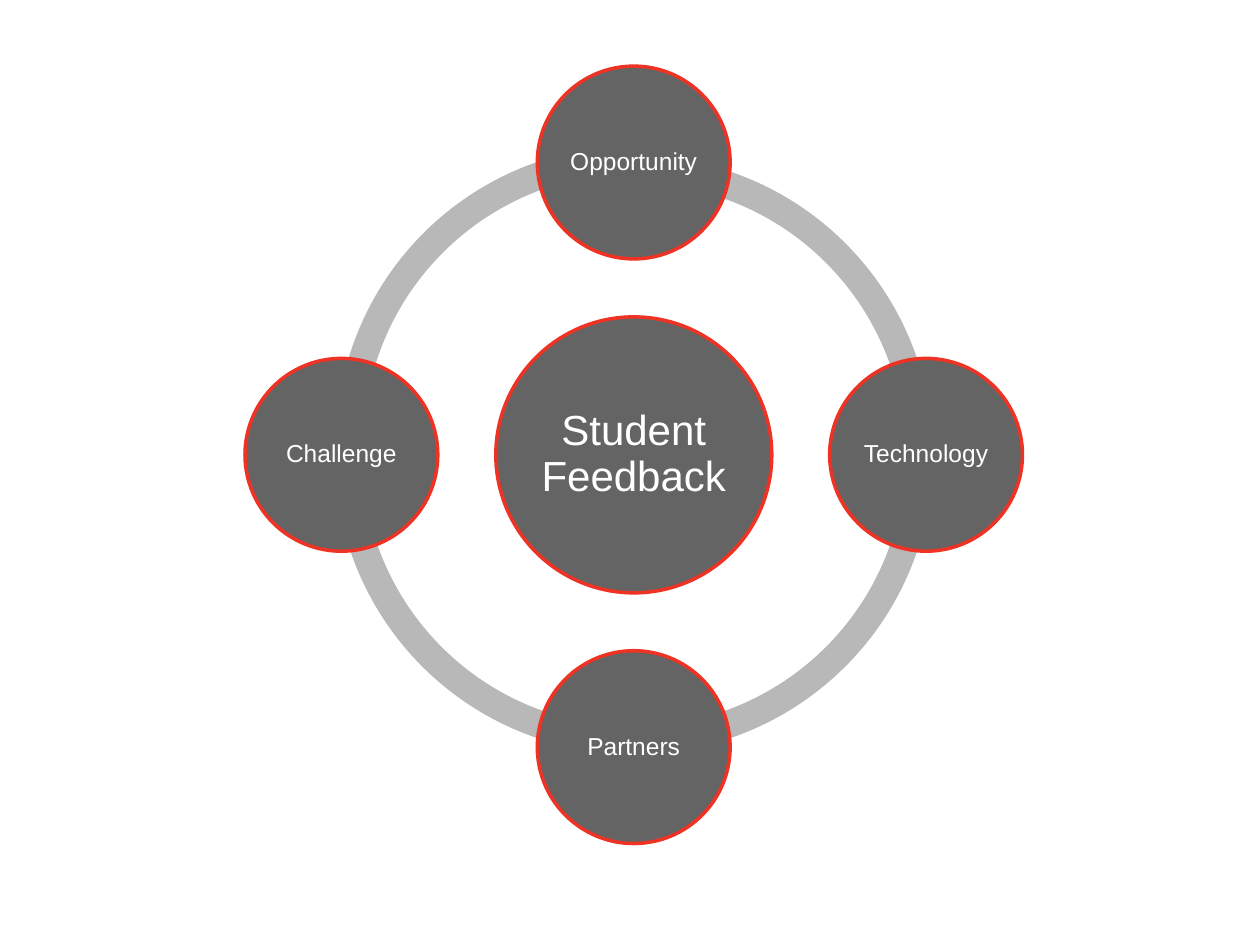
"""Build a radial cycle slide with a central topic and four linked themes."""
from dataclasses import dataclass

from pptx import Presentation
from pptx.dml.color import RGBColor
from pptx.enum.shapes import MSO_SHAPE
from pptx.enum.text import MSO_ANCHOR, PP_ALIGN
from pptx.shapes.autoshape import Shape
from pptx.slide import Slide
from pptx.util import Inches, Pt

CENTER_X, CENTER_Y = 5.03, 3.61
ORBIT = 2.32
RING_SIZE = 4.75
RING_THICKNESS = 0.046
ADJ_PER_DEGREE = 0.6


@dataclass
class Node:
    text: str
    dx: float = 0
    dy: float = 0
    size: float = 1.53
    font_size: int = 14
    inset: float = 0.02


@dataclass
class Arc:
    start: int
    end: int
    dx: float = 0
    dy: float = 0


NODES = [
    Node("Student Feedback", size=2.19, font_size=24, inset=0.03),
    Node("Opportunity", dy=-ORBIT),
    Node("Technology", dx=ORBIT),
    Node("Partners", dy=ORBIT),
    Node("Challenge", dx=-ORBIT),
]
ARCS = [
    Arc(180, 270, dx=0.01, dy=-0.08),
    Arc(90, 180),
    Arc(0, 90),
    Arc(270, 0),
]


def rgb(value: str) -> RGBColor:
    """Convert a hex string to a colour."""
    return RGBColor.from_string(value)


def add_centered(s: Slide, kind: MSO_SHAPE, dx: float, dy: float,
                 size: float, fill: str) -> Shape:
    """Add a filled square-framed shape offset from the diagram centre."""
    left, top = CENTER_X + dx - size / 2, CENTER_Y + dy - size / 2
    sp = s.shapes.add_shape(kind, Inches(left), Inches(top), Inches(size), Inches(size))
    sp.shadow.inherit = False
    sp.fill.solid()
    sp.fill.fore_color.rgb = rgb(fill)
    return sp


def add_arc(s: Slide, arc: Arc) -> None:
    """Draw one quarter of the ring."""
    sp = add_centered(s, MSO_SHAPE.BLOCK_ARC, arc.dx, arc.dy, RING_SIZE, "B8B8B8")
    sp.line.fill.background()
    sp.adjustments[0] = arc.start * ADJ_PER_DEGREE
    sp.adjustments[1] = arc.end * ADJ_PER_DEGREE
    sp.adjustments[2] = RING_THICKNESS


def add_node(s: Slide, node: Node) -> None:
    """Draw one labelled circle."""
    sp = add_centered(s, MSO_SHAPE.OVAL, node.dx, node.dy, node.size, "646464")
    sp.line.color.rgb = rgb("EE3224")
    sp.line.width = Pt(2)
    tf = sp.text_frame
    tf.word_wrap = True
    tf.vertical_anchor = MSO_ANCHOR.MIDDLE
    tf.margin_left = tf.margin_right = Inches(node.inset)
    tf.margin_top = tf.margin_bottom = Inches(node.inset)
    p = tf.paragraphs[0]
    p.text = node.text
    p.alignment = PP_ALIGN.CENTER
    p.line_spacing = 0.9
    p.font.name = "Arial"
    p.font.size = Pt(node.font_size)
    p.font.color.rgb = rgb("FFFFFF")


def main() -> None:
    """Create and save the presentation."""
    prs = Presentation()
    prs.slide_width, prs.slide_height = Inches(10), Inches(7.5)
    s = prs.slides.add_slide(prs.slide_layouts[6])
    for arc in ARCS:
        add_arc(s, arc)
    for node in NODES:
        add_node(s, node)
    prs.save("out.pptx")


if __name__ == "__main__":
    main()
